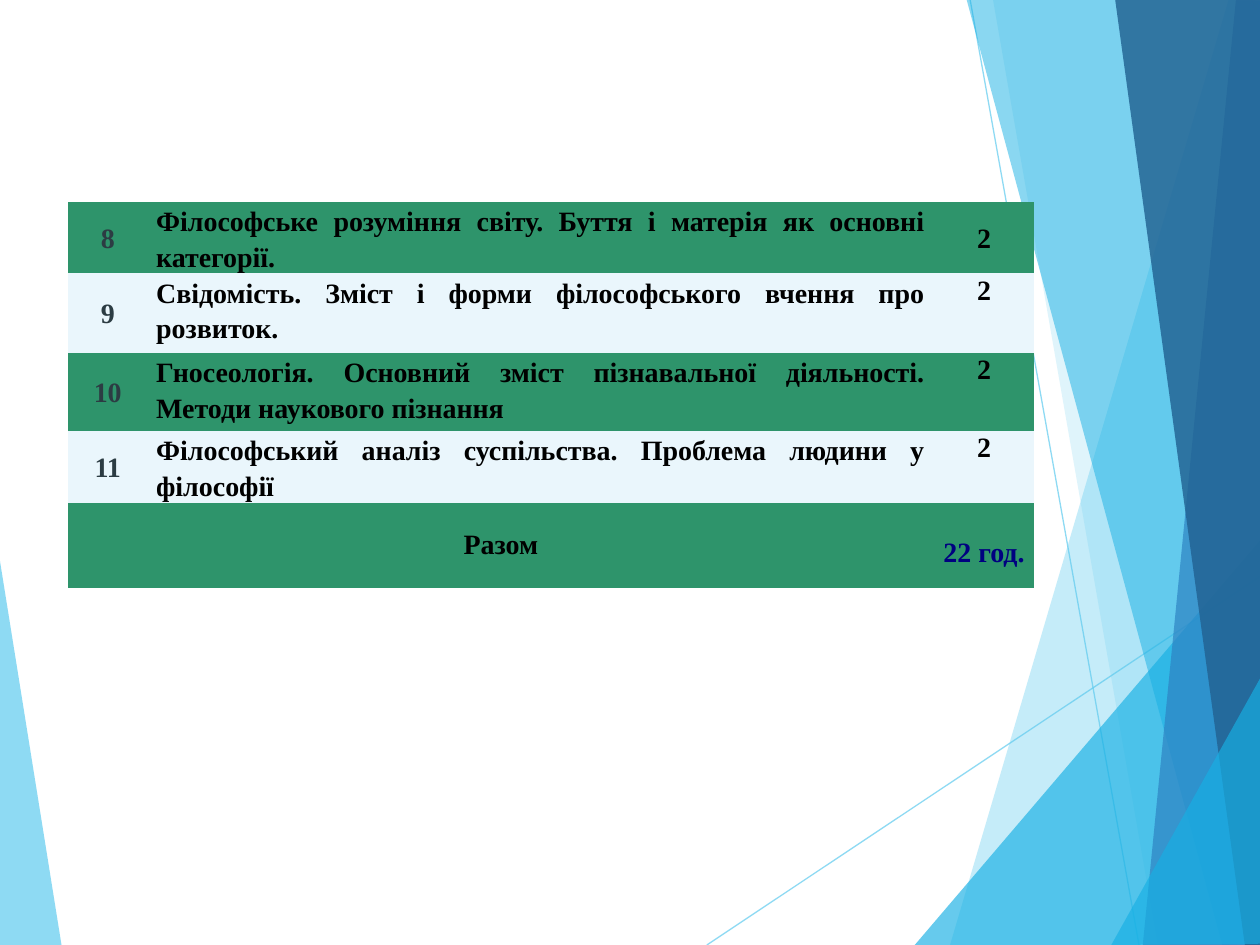
from lxml.etree import SubElement
from pptx import Presentation
from pptx.dml.color import RGBColor
from pptx.enum.shapes import MSO_CONNECTOR
from pptx.enum.text import MSO_ANCHOR, PP_ALIGN
from pptx.oxml.ns import qn
from pptx.util import Inches, Pt


def paint(fill, color, opacity=100):
    fill.solid()
    fill.fore_color.rgb = RGBColor.from_string(color)
    if opacity < 100:
        for tint in fill._xPr.iter(qn("a:srgbClr")):
            SubElement(tint, qn("a:alpha"), val=str(opacity * 1000))


def write(cell, text, color, align, spacing, side, edge, anchor):
    cell.margin_left = cell.margin_right = Inches(side)
    cell.margin_top = cell.margin_bottom = Inches(edge)
    cell.vertical_anchor = anchor
    paragraph = cell.text_frame.paragraphs[0]
    paragraph.text = text
    paragraph.alignment = align
    paragraph.line_spacing = spacing
    paragraph.font.name = "Times New Roman"
    paragraph.font.size = Pt(16)
    paragraph.font.bold = True
    paragraph.font.color.rgb = RGBColor.from_string(color)


presentation = Presentation()
presentation.slide_width = Inches(10)
presentation.slide_height = Inches(7.5)
slide = presentation.slides.add_slide(presentation.slide_layouts[6])

left_facet = ("5FCBEF", 70, [(-0.01, 4.39), (0.49, 7.51), (-0.01, 7.5)])
rays = [((5.61, 7.5), (10.01, 4.57)), ((7.7, 0), (9.04, 7.5))]
right_facets = [
    ("5FCBEF", 36, [(9.75, 0), (7.54, 7.5), (10.02, 7.51), (10.01, 0.01)]),
    ("5FCBEF", 20, [(7.88, -0.01), (9.19, 7.5), (10.01, 7.5), (10.01, -0.01)]),
    ("17B0E4", 66, [(7.26, 7.5), (10, 4.29), (10.01, 7.5)]),
    ("17B0E4", 50, [(7.67, -0.01), (9.7, 7.5), (10.01, 7.49), (10.01, -0.01)]),
    ("2E83C3", 70, [(9.81, -0.01), (9.07, 7.5), (10.01, 7.5), (10, -0.01)]),
    ("226292", 82, [(8.85, -0.01), (9.88, 7.5), (10.02, 7.5), (10, -0.01)]),
    ("17B0E4", 66, [(8.82, 7.5), (10.02, 5.35), (10.02, 7.49)]),
]

for start, end in rays:
    ray = slide.shapes.add_connector(
        MSO_CONNECTOR.STRAIGHT, *map(Inches, start + end))
    ray.line.width = Pt(0.75)
    paint(ray.line.fill, "5FCBEF", 70)
    SubElement(ray._element.spPr, qn("a:effectLst"))

for color, opacity, points in [left_facet] + right_facets:
    corners = [(Inches(x), Inches(y)) for x, y in points]
    outline = slide.shapes.build_freeform(*corners[0])
    outline.add_line_segments(corners[1:], close=True)
    facet = outline.convert_to_shape()
    paint(facet.fill, color, opacity)
    facet.line.fill.background()
    facet.shadow.inherit = False

topics = [
    ("8", "Філософське розуміння світу. Буття і матерія як основні категорії. "),
    ("9", "Свідомість. Зміст і форми філософського вчення про розвиток."),
    ("10", "Гносеологія. Основний зміст пізнавальної діяльності. Методи наукового пізнання "),
    ("11", "Філософський аналіз суспільства. Проблема людини у філософії"),
]
column_widths = [0.63, 6.24, 0.8]
row_heights = [0.57, 0.63, 0.62, 0.57, 0.68]

frame = slide.shapes.add_table(
    len(row_heights), len(column_widths), Inches(0.54), Inches(1.6),
    Inches(sum(column_widths)), Inches(sum(row_heights)))
hours = frame.table
hours.first_row = False
hours.horz_banding = False
for style in hours._tbl.iter(qn("a:tableStyleId")):
    style.text = "{2D5ABB26-0587-4C30-8999-92F81FD0307C}"
for column, width in zip(hours.columns, column_widths):
    column.width = Inches(width)
for index, (row, height) in enumerate(zip(hours.rows, row_heights)):
    row.height = Inches(height)
    for cell in row.cells:
        paint(cell.fill, "EAF6FC" if index % 2 else "2E946B")

center, justify = PP_ALIGN.CENTER, PP_ALIGN.JUSTIFY
top, middle = MSO_ANCHOR.TOP, MSO_ANCHOR.MIDDLE
for index, (number, topic) in enumerate(topics):
    write(hours.cell(index, 0), number, "2C3C43", center, 1.07, 0.03, 0, middle)
    write(hours.cell(index, 1), topic, "000000", justify, 1.15, 0.07, 0, top)
    write(hours.cell(index, 2), "2", "000000", center, 1.07, 0.03, 0,
          top if index else middle)

last = len(topics)
hours.cell(last, 0).merge(hours.cell(last, 1))
write(hours.cell(last, 0), "Разом", "000000", center, 1, 0.07, 0.05, middle)
write(hours.cell(last, 2), "22 год.", "000080", center, 1.5, 0.07, 0.05, middle)

presentation.save("out.pptx")
